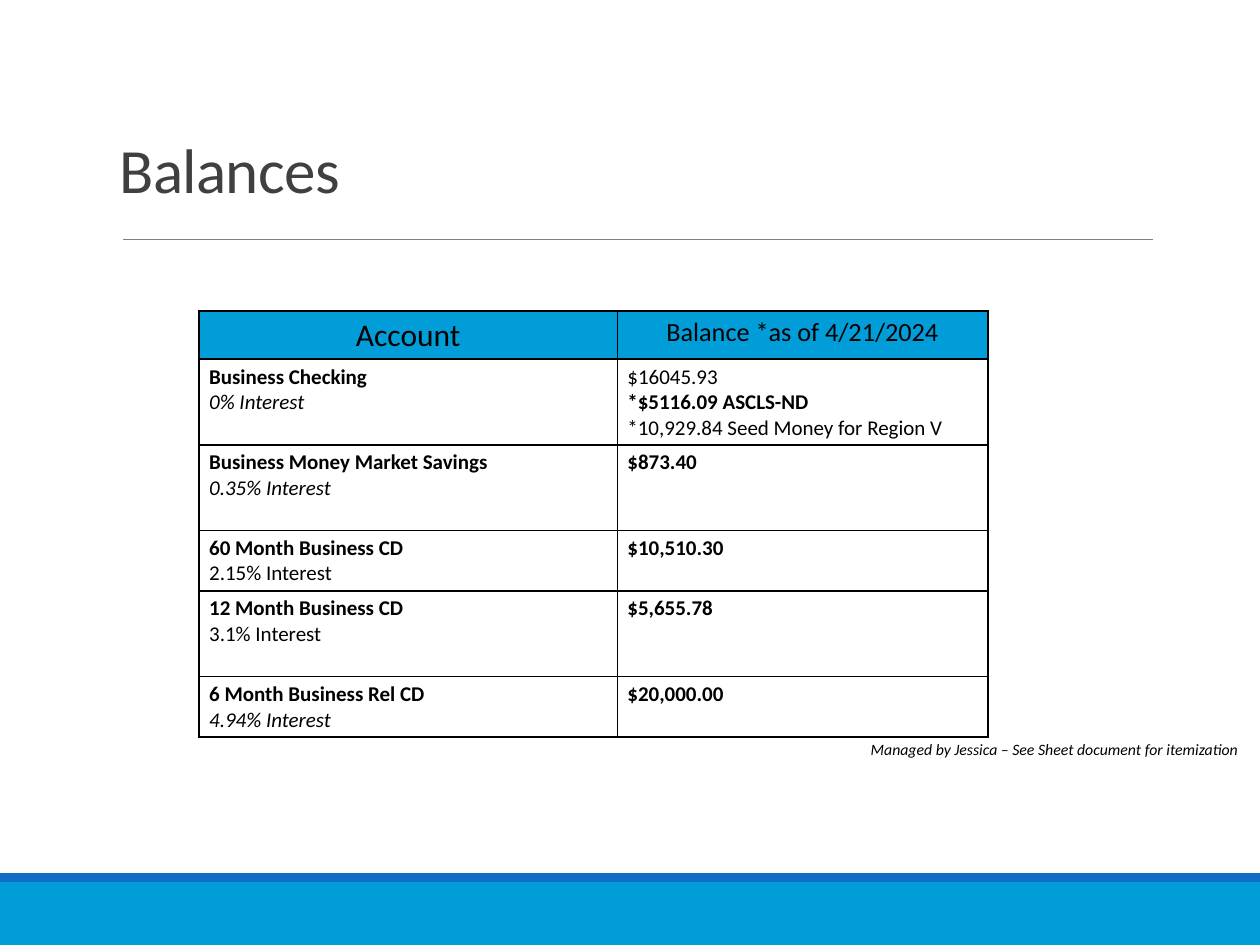
from lxml import etree
from pptx import Presentation
from pptx.dml.color import RGBColor
from pptx.enum.shapes import MSO_CONNECTOR, MSO_SHAPE
from pptx.enum.text import MSO_ANCHOR, PP_ALIGN
from pptx.oxml.ns import qn
from pptx.util import Inches, Pt

RECT = MSO_SHAPE.RECTANGLE
STRAIGHT = MSO_CONNECTOR.STRAIGHT
CENTER = PP_ALIGN.CENTER
TOP, BOTTOM = MSO_ANCHOR.TOP, MSO_ANCHOR.BOTTOM

WIDTH, HEIGHT = 10, 7.5
FONT = "Calibri"
BLACK, GREY, TITLE_GREY = "000000", "808080", "404040"
SKY, BLUE = "009DD9", "0F6FC6"

PLAIN, BOLD, ITALIC = {}, {"bold": True}, {"italic": True}

# Table grid: column widths, then row heights by number of text lines
COLUMNS = [3.32, 2.94]
HEADER_HEIGHT = 0.38
LINE_HEIGHTS = {2: 0.48, 3: 0.68}

HEADINGS = [("Account", 18), ("Balance *as of 4/21/2024", 15)]

# Account, interest, interest style, balance lines, row height in lines
ACCOUNTS = [
    ("Business Checking", "0% Interest", ITALIC,
     [("$16045.93", PLAIN), ("*$5116.09 ASCLS-ND", BOLD),
      ("*10,929.84 Seed Money for Region V", PLAIN)], 3),
    ("Business Money Market Savings", "0.35% Interest", ITALIC,
     [("$873.40", BOLD)], 3),
    ("60 Month Business CD", "2.15% Interest", PLAIN,
     [("$10,510.30", BOLD)], 2),
    ("12 Month Business CD", "3.1% Interest", PLAIN,
     [("$5,655.78", BOLD)], 3),
    ("6 Month Business Rel CD", "4.94% Interest", ITALIC,
     [("$20,000.00", BOLD)], 2),
]


def rgb(color):
    return RGBColor.from_string(color)


def inches(*lengths):
    return [Inches(length) for length in lengths]


def write_lines(frame, lines, size, color=BLACK, align=None):
    """Fill a text frame with one paragraph per (text, style) pair."""
    for index, (text, style) in enumerate(lines):
        paragraph = frame.add_paragraph() if index else frame.paragraphs[0]
        paragraph.alignment = align
        run = paragraph.add_run()
        run.text = text
        run.font.color.rgb = rgb(color)
        looks = {"name": FONT, "size": Pt(size), "bold": False, "italic": False}
        for key, value in {**looks, **style}.items():
            setattr(run.font, key, value)


def add_band(slide, top, height, color):
    band = slide.shapes.add_shape(RECT, *inches(0, top, WIDTH, height))
    band.shadow.inherit = False
    band.fill.solid()
    band.fill.fore_color.rgb = rgb(color)
    band.line.fill.background()


def add_rule(slide, left, right, y):
    rule = slide.shapes.add_connector(STRAIGHT, *inches(left, y, right, y))
    rule.line.color.rgb = rgb(GREY)
    rule.line.width = Pt(0.5)
    etree.SubElement(rule._element.spPr, qn("a:effectLst"))


def add_text(slide, box, text, size, color=BLACK, style=PLAIN, anchor=TOP):
    frame = slide.shapes.add_textbox(*inches(*box)).text_frame
    margins = inches(0.07, 0.04, 0.07, 0.04)
    for side, margin in zip(("left", "top", "right", "bottom"), margins):
        setattr(frame, f"margin_{side}", margin)
    frame.word_wrap = True
    frame.vertical_anchor = anchor
    write_lines(frame, [(text, style)], size, color)
    return frame.paragraphs[0]


def add_borders(cell):
    properties = cell._tc.get_or_add_tcPr()
    for side in ("lnL", "lnR", "lnT", "lnB"):
        border = etree.SubElement(properties, qn(f"a:{side}"), w=str(Pt(1)))
        fill = etree.SubElement(border, qn("a:solidFill"))
        etree.SubElement(fill, qn("a:srgbClr"), val=BLACK)


def fill_cell(cell, lines, size=12, color=None, align=None):
    cell.margin_left = cell.margin_right = Inches(0.08)
    cell.margin_top = cell.margin_bottom = Inches(0.04)
    add_borders(cell)
    if color:
        cell.fill.solid()
        cell.fill.fore_color.rgb = rgb(color)
    else:
        cell.fill.background()
    write_lines(cell.text_frame, lines, size, align=align)


def add_balances(slide, left, top):
    heights = [HEADER_HEIGHT] + [LINE_HEIGHTS[row[-1]] for row in ACCOUNTS]
    box = inches(left, top, sum(COLUMNS), sum(heights))
    table = slide.shapes.add_table(len(heights), len(COLUMNS), *box).table
    table.horz_banding = False
    for column, width in zip(table.columns, COLUMNS):
        column.width = Inches(width)
    for row, height in zip(table.rows, heights):
        row.height = Inches(height)

    for column, (heading, size) in enumerate(HEADINGS):
        fill_cell(table.cell(0, column), [(heading, PLAIN)], size, SKY, CENTER)
    for row, (account, interest, style, balance, _) in enumerate(ACCOUNTS, 1):
        fill_cell(table.cell(row, 0), [(account, BOLD), (interest, style)])
        fill_cell(table.cell(row, 1), balance)


def main():
    deck = Presentation()
    deck.slide_width, deck.slide_height = inches(WIDTH, HEIGHT)
    slide = deck.slides.add_slide(deck.slide_layouts[6])

    # Footer bands and the rule under the title
    add_band(slide, 7, 0.5, SKY)
    add_band(slide, 6.93, 0.07, BLUE)
    add_rule(slide, 0.98, 9.15, 1.9)

    # Title
    title = add_text(slide, (0.88, 0.49, 8.25, 1.19), "Balances", 36,
                     TITLE_GREY, anchor=BOTTOM)
    title.line_spacing = 0.85
    title.runs[0].font._element.set("spc", "-40")

    # Account balances and the note below them
    add_balances(slide, 1.58, 2.47)
    add_text(slide, (6.84, 5.83, 4.38, 0.23),
             "Managed by Jessica – See Sheet document for itemization", 9,
             style=ITALIC)

    deck.save("out.pptx")


if __name__ == "__main__":
    main()
